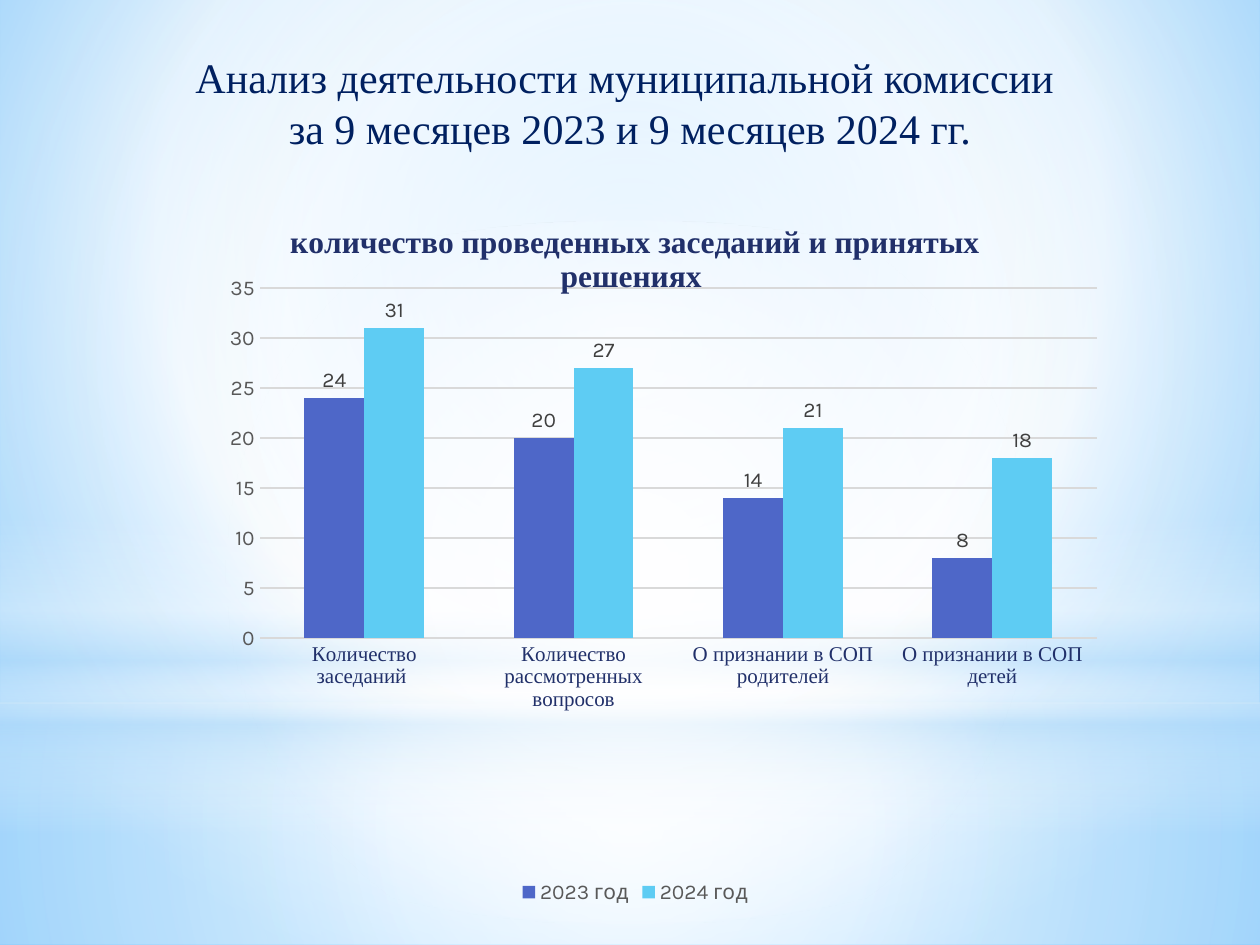
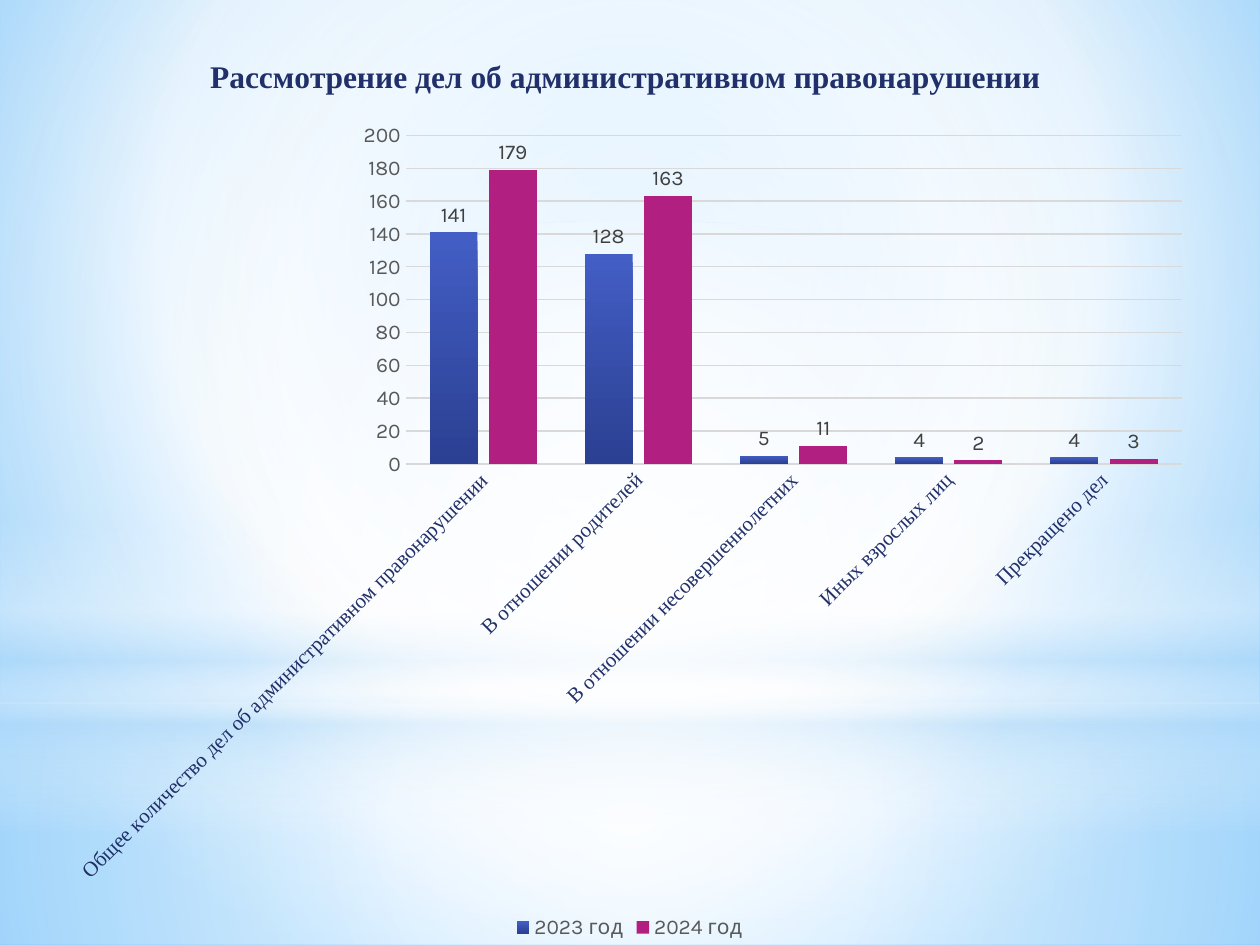
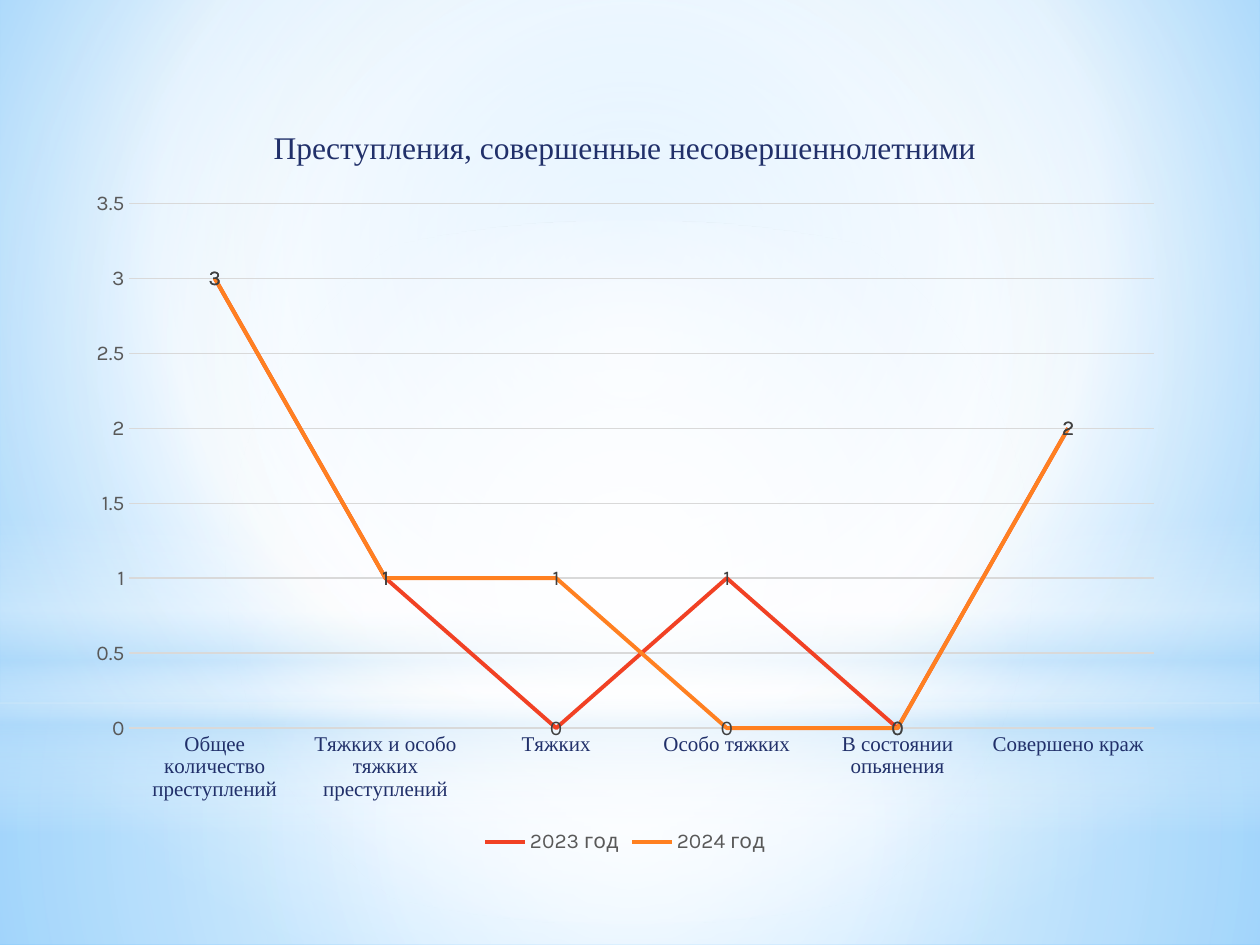
from dataclasses import dataclass

from lxml import etree
from pptx import Presentation
from pptx import util as u
from pptx.chart.data import CategoryChartData
from pptx.dml.color import RGBColor
from pptx.enum import chart as charts
from pptx.enum import shapes, text
from pptx.oxml import parse_xml
from pptx.oxml.ns import nsdecls, qn


@dataclass(frozen=True)
class Theme:
    serif: str = "Times New Roman"
    sans: str = "Karla"
    heading: str = "002060"
    navy: str = "21306A"
    gray: str = "595959"
    label: str = "404040"
    grid: str = "D9D9D9"
    white: str = "FFFFFF"
    pale: str = "B4DCFA"
    heading_size: int = 24
    title_size: int = 18
    text_size: int = 12
    base_size: int = 10


THEME = Theme()
YEARS = ("2023 год", "2024 год")
CENTER = (50, 50, 50, 50)
BACKDROP = [(0, "9ED5FF", 100), (60, THEME.white, 100), (100, "5BB9FF", 100)]

# Backdrop shapes: preset, box, gradient stops (position, colour, opacity), focus
BANDS = [
    (shapes.MSO_SHAPE.RECTANGLE, (0, 5.58, 10, 1.92),
     [(0, THEME.white, 91), (37, THEME.white, 76), (100, THEME.pale, 79)], CENTER),
    (shapes.MSO_SHAPE.RECTANGLE, (0, 0, 10, 5.58),
     [(0, THEME.white, 89), (48, THEME.white, 62), (100, THEME.pale, 79)], CENTER),
    (shapes.MSO_SHAPE.RECTANGLE, (0, 4.12, 10, 2.5),
     [(0, THEME.white, 0), (29, THEME.white, 30), (45, THEME.pale, 40),
      (55, THEME.white, 26), (65, THEME.pale, 60), (100, THEME.white, 0)], None),
    (shapes.MSO_SHAPE.OVAL, (0, 1.75, 10, 5.58),
     [(0, THEME.white, 100), (56, THEME.white, 0)], CENTER),
]


def inches(box):
    return [u.Inches(length) for length in box]


def style_font(font, size, color, name, bold=None):
    font.size, font.name, font.bold = u.Pt(size), name, bold
    font.color.rgb = RGBColor.from_string(color)


def apply_gradient(solid, stops, focus=None):
    """Replace a solid fill by a gradient: circular around focus, or downwards."""
    marks = "".join(
        f'<a:gs pos="{position * 1000}"><a:srgbClr val="{color}">'
        f'<a:alpha val="{opacity * 1000}"/></a:srgbClr></a:gs>'
        for position, color, opacity in stops)
    if focus:
        sides = " ".join(f'{side}="{share * 1000}"' for side, share in zip("ltrb", focus))
        course = f'<a:path path="circle"><a:fillToRect {sides}/></a:path>'
    else:
        course = '<a:lin ang="5400000" scaled="0"/>'
    solid.getparent().replace(solid, parse_xml(
        f'<a:gradFill {nsdecls("a")} rotWithShape="1"><a:gsLst>{marks}</a:gsLst>'
        f'{course}</a:gradFill>'))


def build_backdrop(master, page):
    """Draw the bands on a page and move them behind everything on the master."""
    master.background.fill.solid()
    apply_gradient(master.element.xpath(".//p:bgPr/a:solidFill")[0], BACKDROP,
                   (20, 10, 20, 60))
    for number, (preset, box, stops, focus) in enumerate(BANDS):
        band = page.shapes.add_shape(preset, *inches(box))
        band.shadow.inherit = False
        band.line.fill.background()
        band.fill.solid()
        apply_gradient(band.element.spPr.find(qn("a:solidFill")), stops, focus)
        band.element.xpath(".//p:cNvPr")[0].set("id", str(100 + number))
        master.shapes.element.insert(2 + number, band.element)


def add_heading(page, box, words):
    body = page.placeholders[1]
    body.left, body.top, body.width, body.height = inches(box)
    frame = body.text_frame
    frame.auto_size = text.MSO_AUTO_SIZE.NONE
    frame.vertical_anchor = text.MSO_ANCHOR.TOP
    para = frame.paragraphs[0]
    para.text = words
    para.alignment = text.PP_ALIGN.CENTER
    para.space_before, para.space_after = u.Pt(5), u.Pt(3)
    properties = para._p.get_or_add_pPr()
    properties.set("marL", "0")
    properties.set("indent", "0")
    etree.SubElement(properties, qn("a:buNone"))
    for span in para.runs:
        style_font(span.font, THEME.heading_size, THEME.heading, THEME.serif)


def style_axes(chart, top, step, base_line, angle):
    categories, values = chart.category_axis, chart.value_axis
    for axis, color, name in ((categories, THEME.navy, THEME.serif),
                              (values, THEME.gray, THEME.sans)):
        axis.major_tick_mark = axis.minor_tick_mark = charts.XL_TICK_MARK.NONE
        style_font(axis.tick_labels.font, THEME.text_size, color, name)
        axis.format.line.fill.background()
    categories._element.xpath("c:txPr/a:bodyPr")[0].set("rot", str(angle * 60000))
    values.minimum_scale, values.maximum_scale, values.major_unit = 0, top, step
    lines = [(values.major_gridlines.format.line, 0.75)]
    if base_line:
        lines.append((categories.format.line, base_line))
    for line, width in lines:
        line.color.rgb = RGBColor.from_string(THEME.grid)
        line.width = u.Pt(width)


def style_series(series, paint, position, is_line):
    if is_line:
        series.smooth = False
        series.format.line.color.rgb = RGBColor.from_string(paint)
        series.format.line.width = u.Pt(2.25)
    else:
        series.format.fill.solid()
        if isinstance(paint, list):
            apply_gradient(series._element.xpath("c:spPr/a:solidFill")[0], paint)
        else:
            series.format.fill.fore_color.rgb = RGBColor.from_string(paint)
    labels = series.data_labels
    labels.show_value = True
    labels.position = position
    style_font(labels.font, THEME.text_size, THEME.label, THEME.sans)


def set_plot_box(chart, shares):
    area = chart._chartSpace.xpath("c:chart/c:plotArea")[0]
    for layout in area.findall(qn("c:layout")):
        area.remove(layout)
    values = "".join(f'<c:{key} val="{share}"/>' for key, share in zip("xywh", shares))
    area.insert(0, parse_xml(
        f'<c:layout {nsdecls("c")}><c:manualLayout><c:layoutTarget val="inner"/>'
        f'<c:xMode val="edge"/><c:yMode val="edge"/>{values}'
        f'</c:manualLayout></c:layout>'))


def add_year_chart(page, box, title, categories, rows, paints, scale, bold=True,
                   is_line=False, base_line=None, angle=0, gap=150, overlap=0,
                   plot_box=None):
    """Compare the two years in a column or line chart."""
    data = CategoryChartData()
    data.categories = categories
    for year, row in zip(YEARS, rows):
        data.add_series(year, row)
    kind = charts.XL_CHART_TYPE.LINE if is_line else charts.XL_CHART_TYPE.COLUMN_CLUSTERED
    chart = page.shapes.add_chart(kind, *inches(box), data).chart
    style_font(chart.font, THEME.base_size, "000000", THEME.sans)

    # Title and legend
    chart.has_title = True
    chart.chart_title.text_frame.text = title
    span = chart.chart_title.text_frame.paragraphs[0].runs[0]
    style_font(span.font, THEME.title_size, THEME.navy, THEME.serif, bold)
    chart.has_legend = True
    chart.legend.position = charts.XL_LEGEND_POSITION.BOTTOM
    chart.legend.include_in_layout = False
    style_font(chart.legend.font, THEME.text_size, THEME.gray, THEME.sans)

    # Axes and series
    style_axes(chart, *scale, base_line, angle)
    plot = chart.plots[0]
    plot.vary_by_categories = False
    position = charts.XL_LABEL_POSITION.CENTER
    if not is_line:
        plot.gap_width, plot.overlap = gap, overlap
        position = charts.XL_LABEL_POSITION.OUTSIDE_END
    for series, paint in zip(plot.series, paints):
        style_series(series, paint, position, is_line)
    if plot_box:
        set_plot_box(chart, plot_box)


def build_meetings(page):
    title = page.shapes.title.element
    title.getparent().remove(title)
    add_heading(page, (0.59, 0.36, 8.82, 6.46),
                "Анализ деятельности муниципальной комиссии \n"
                "за 9 месяцев 2023 и 9 месяцев 2024 гг.")
    add_year_chart(
        page, (1.22, 1.55, 7.64, 5.67),
        "количество проведенных заседаний и принятых решениях ",
        ["Количество заседаний ", "Количество рассмотренных вопросов",
         "О признании в СОП родителей", "О признании в СОП детей"],
        [(24, 20, 14, 8), (31, 27, 21, 18)], ["4E67C8", "5ECCF3"], (35, 5),
        plot_box=(0.11, 0.13, 0.87, 0.49))


def build_offences(page):
    add_year_chart(
        page, (0.43, 0.21, 9.13, 7.29),
        "Рассмотрение дел об административном правонарушении ",
        ["Общее количество дел об административном правонарушении",
         "В отношении родителей", "В отношении несовершеннолетних",
         "Иных взрослых лиц", "Прекращено дел"],
        [(141, 128, 5, 4, 4), (179, 163, 11, 2, 3)],
        [[(0, "435EC5", 100), (100, "2B4092", 100)], "B11F80"], (200, 20),
        base_line=1, angle=-45, gap=100, overlap=-24)


def build_crimes(page):
    add_year_chart(
        page, (0.59, 0.8, 8.74, 6.02),
        "Преступления, совершенные несовершеннолетними",
        ["Общее количество преступлений", "Тяжких и особо тяжких преступлений",
         "Тяжких", "Особо тяжких", "В состоянии опьянения", "Совершено краж"],
        [(3, 1, 0, 1, 0, 2), (3, 1, 1, 0, 0, 2)], ["F14124", "FF8021"], (3.5, 0.5),
        bold=False, is_line=True, base_line=0.75)


def main():
    deck = Presentation()
    deck.slide_width, deck.slide_height = u.Inches(10), u.Inches(7.5)
    content, blank = deck.slide_layouts[1], deck.slide_layouts[6]
    pages = [deck.slides.add_slide(layout) for layout in (content, blank, blank)]
    build_backdrop(deck.slide_master, pages[0])
    for build, page in zip((build_meetings, build_offences, build_crimes), pages):
        build(page)
    deck.save("out.pptx")


if __name__ == "__main__":
    main()
